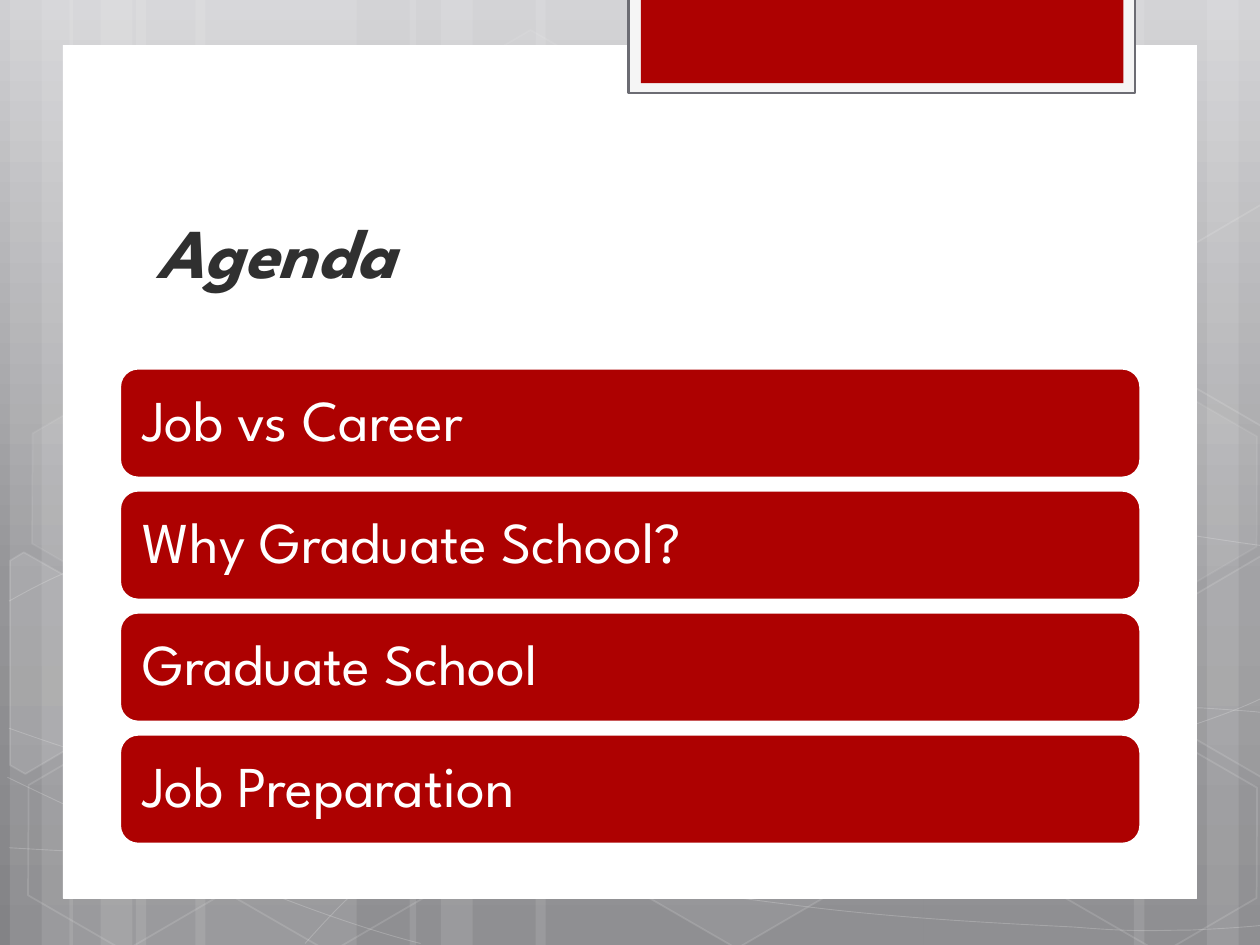
from copy import deepcopy
from math import cos, radians, sin
from lxml.etree import SubElement
from pptx import Presentation
from pptx.dml.color import RGBColor
from pptx.enum.shapes import MSO_SHAPE
from pptx.enum.text import MSO_ANCHOR, MSO_AUTO_SIZE, PP_ALIGN
from pptx.oxml.ns import qn
from pptx.util import Cm, Pt

WHITE = RGBColor(0xFF, 0xFF, 0xFF)
RED = RGBColor(0xAD, 0x01, 0x01)
DARK = RGBColor(0x30, 0x30, 0x30)
FRAME = RGBColor(0xF5, 0xF5, 0xF5)
GREY = RGBColor(0x6C, 0x6C, 0x73)
BACKDROP = [(0, RGBColor(0xCF, 0xCF, 0xD2)),
            (0.62, RGBColor(0x95, 0x95, 0x98)),
            (1, RGBColor(0x83, 0x83, 0x86))]
FONT = "League Spartan"
TILT = 30


def paint(sp, fill=None, line=None, width=1, fill_alpha=100, line_alpha=100):
    sp.shadow.inherit = False
    for fmt, color, alpha, tag in ((sp.fill, fill, fill_alpha, "p:spPr/a:solidFill"),
                                   (sp.line.fill, line, line_alpha, "p:spPr/a:ln/a:solidFill")):
        if color is None or alpha == 0:
            fmt.background()
            continue
        fmt.solid()
        fmt.fore_color.rgb = color
        if alpha < 100:
            steps = [qn(t) for t in tag.split("/")]
            clr = sp.element.find("/".join(steps))[0]
            SubElement(clr, qn("a:alpha")).set("val", str(alpha * 1000))
    if line is not None:
        sp.line.width = Pt(width)


def outline(points, close):
    pts = [(Cm(x), Cm(y)) for x, y in points]
    builder = s.shapes.build_freeform(*pts[0])
    builder.add_line_segments(pts[1:], close=close)
    return builder.convert_to_shape()


prs = Presentation()
prs.slide_width, prs.slide_height = Cm(25.4), Cm(19.05)
s = prs.slides.add_slide(prs.slide_layouts[5])

bg = s.background.fill
bg.gradient()
bg.gradient_angle = 270
stops = s.element.find(".//" + qn("a:gsLst"))
stops.append(deepcopy(stops[0]))
for stop, (position, color) in zip(bg.gradient_stops, BACKDROP):
    stop.position = position
    stop.color.rgb = color

stripes = [(2.74, 4.45), (0.2, 1.27), (0.84, 2.11), (3.94, 4.45), (1.4, 1.27),
           (2.03, 2.11), (18.62, 4.45), (24.33, 1.27), (22.86, 2.11),
           (10.8, 7.82), (8.26, 1.27), (8.89, 2.11)]
for x, w in stripes:
    sp = s.shapes.add_shape(MSO_SHAPE.RECTANGLE, Cm(x), 0, Cm(w), prs.slide_height)
    paint(sp, WHITE, fill_alpha=10)

curves = [
    [(0.18, 17.09), (1.55, 17.17), (2.92, 17.25), (4.83, 17.22), (6.73, 17.2),
     (9.09, 17.15), (11.63, 16.89), (14.17, 16.64), (17.78, 16.15), (20.12, 15.67),
     (22.43, 15.19), (24.82, 14.43), (25.58, 14)],
    [(0.18, 12.12), (0.91, 11.71), (1.65, 11.33), (3.07, 10.95), (4.52, 10.57),
     (6.58, 10.01), (8.81, 9.83), (11.07, 9.65), (13.82, 9.63), (16.61, 9.83),
     (19.41, 10.03), (24.05, 10.82), (25.58, 11.02)],
    [(0.15, 15.67), (3.05, 17.07), (6.27, 18.47), (8.48, 19.02)],
    [(0.18, 14.68), (0.97, 14.96), (1.78, 15.24), (3.25, 15.65), (4.72, 16.03),
     (6.93, 16.66), (9.07, 17.09), (11.18, 17.53), (13.84, 17.98), (15.95, 18.24),
     (18.06, 18.52), (20.32, 18.62), (21.67, 18.69), (22.99, 18.8), (23.34, 18.75),
     (24, 18.75), (24.66, 18.72), (25.12, 18.69), (25.58, 18.64)],
    [(6.15, 19.02), (6.6, 18.52), (7.06, 18.01), (7.67, 17.55), (8.28, 17.09),
     (9.14, 16.59), (9.86, 16.23), (10.57, 15.88), (11, 15.72), (11.94, 15.47),
     (12.85, 15.21), (14.55, 14.86), (15.44, 14.68), (16.36, 14.5), (16.48, 14.5),
     (17.27, 14.45), (18.06, 14.38), (19.3, 14.3), (20.17, 14.27), (21.06, 14.25),
     (22.5, 14.27), (22.5, 14.27), (22.5, 14.27), (24.21, 14.27), (24.21, 14.27),
     (24.66, 14.3), (25.1, 14.33), (25.32, 14.35), (25.55, 14.38), (25.48, 14.35),
     (25.55, 14.38)],
]
for curve in curves:
    sp = outline(curve, False)
    path = sp.element.find(".//" + qn("a:path"))
    lines = path.findall(qn("a:lnTo"))
    for i in range(0, len(lines), 3):
        bezier = SubElement(path, qn("a:cubicBezTo"))
        for ln in lines[i:i + 3]:
            bezier.append(ln[0])
            path.remove(ln)
    paint(sp, line=WHITE, width=0.5, line_alpha=20)

hexagons = [(8.48, 0.91, 4, 8), (12.62, 14.96, 6, 12), (0.28, 15.01, 0, 12),
            (0.36, 7.92, 7, 8), (4.42, 15.04, 0, 12), (19.13, 11.51, 10, 12),
            (21.18, 15.06, 0, 12), (21.18, 7.98, 7, 8)]
for x, y, fill_alpha, line_alpha in hexagons:
    sp = s.shapes.add_shape(MSO_SHAPE.HEXAGON, Cm(x), Cm(y), Cm(4.45), Cm(3.86))
    sp.adjustments[0] = 0.285
    sp.rotation = TILT
    paint(sp, WHITE, WHITE, 1, fill_alpha, line_alpha)

left_part = [(0.2, 11.3), (0.48, 11.13), (2.44, 12.24), (2.41, 14.48),
             (0.51, 15.6), (0.2, 15.42)]
right_part = [(23.52, 12.32), (25.43, 11.2), (25.63, 11.33), (25.63, 15.57),
              (25.45, 15.67), (23.52, 14.55)]
upper_part = [(x, y - 7.08) for x, y in right_part]
cos_t, sin_t = cos(radians(TILT)), sin(radians(TILT))
for points, cx, cy, fill_alpha in ((left_part, 0.91, 13.59, 10),
                                   (right_part, 25.02, 13.21, 4),
                                   (upper_part, 25.02, 6.13, 0)):
    level = [(cx + (x - cx) * cos_t + (y - cy) * sin_t,
              cy - (x - cx) * sin_t + (y - cy) * cos_t) for x, y in points]
    sp = outline(level, True)
    sp.rotation = TILT
    paint(sp, WHITE, WHITE, 1, fill_alpha, 12)

panels = [(1.27, 0.91, 22.86, 17.2, WHITE, WHITE, 0.5),
          (12.67, -0.05, 10.21, 1.93, FRAME, GREY, 1.25),
          (12.92, -0.05, 9.73, 1.73, RED, None, 0)]
for x, y, w, h, fill, line, width in panels:
    sp = s.shapes.add_shape(MSO_SHAPE.RECTANGLE, Cm(x), Cm(y), Cm(w), Cm(h))
    paint(sp, fill, line, width)

topics = ["Job vs Career", "Why Graduate School?", "Graduate School", "Job Preparation"]
for i, topic in enumerate(topics):
    sp = s.shapes.add_shape(MSO_SHAPE.ROUNDED_RECTANGLE,
                            Cm(2.42), Cm(7.43 + 2.46 * i), Cm(20.57), Cm(2.2))
    paint(sp, RED, WHITE, 1.25)
    tf = sp.text_frame
    tf.word_wrap = True
    tf.vertical_anchor = MSO_ANCHOR.MIDDLE
    tf.margin_left = tf.margin_right = Cm(0.35)
    tf.margin_top = tf.margin_bottom = Cm(0.36)
    p = tf.paragraphs[0]
    p.text = topic
    p.alignment = PP_ALIGN.LEFT
    p.line_spacing = 0.9
    p.font.name, p.font.size, p.font.color.rgb = FONT, Pt(33), WHITE

title = s.shapes.title
title.left, title.top, title.width, title.height = Cm(2.9), Cm(2.84), Cm(19.51), Cm(3.18)
title.element.getparent().append(title.element)
tf = title.text_frame
tf.auto_size = MSO_AUTO_SIZE.NONE
tf.vertical_anchor = MSO_ANCHOR.BOTTOM
p = tf.paragraphs[0]
p.text = "Agenda"
p.alignment = PP_ALIGN.LEFT
p.font.name, p.font.size, p.font.color.rgb = FONT, Pt(40), DARK
p.font.bold = p.font.italic = True

prs.save("out.pptx")
